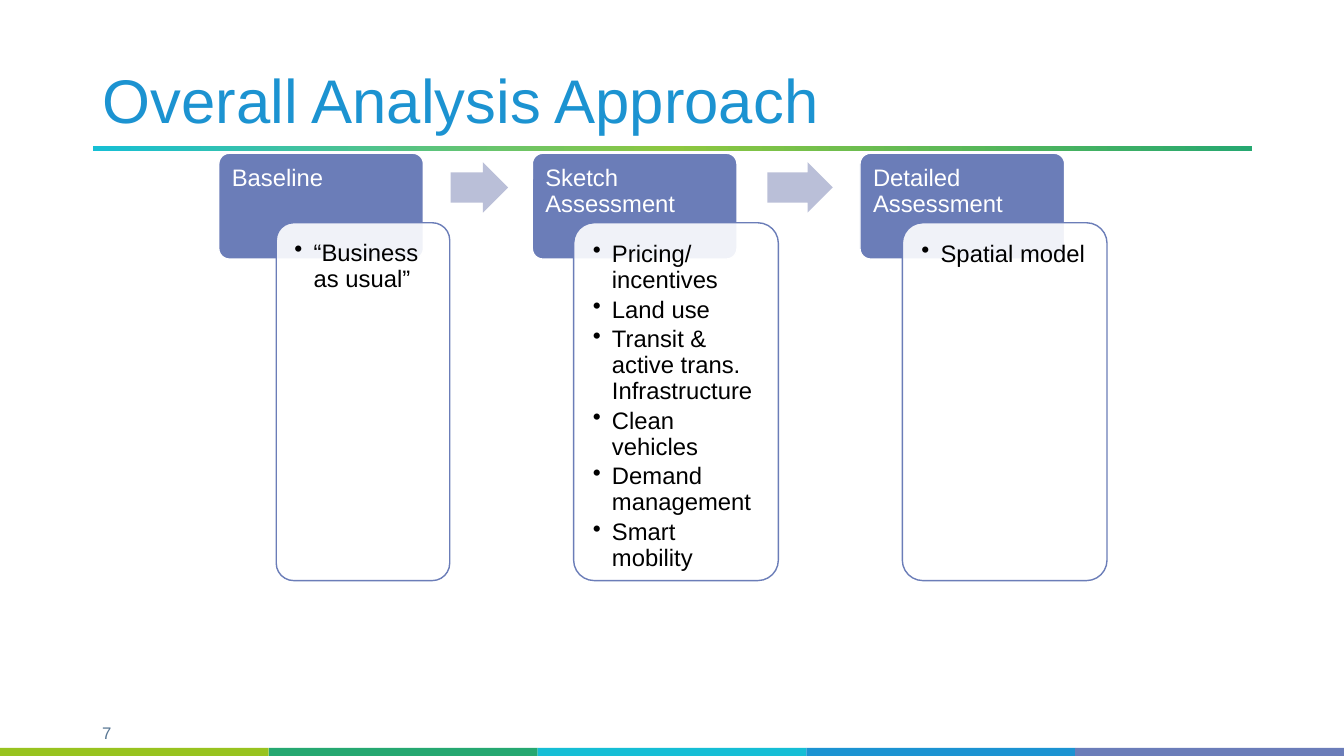
from copy import deepcopy

from pptx import Presentation
from pptx import util as u
from pptx.dml.color import RGBColor
from pptx.enum import shapes, text
from pptx.oxml import ns, xmlchemy as xc

KIND = shapes.MSO_SHAPE
FONT = "Arial"
BLUE = "6B7DB8"
WHITE = "FFFFFF"
STRIPES = ["98C31F", "26A871", "16BED5", "1C93D2", "6B7DB9"]
FADE = [(0, "16BFD4"), (0.5, "8DC73F"), (1, "26A871")]
# Header left, card left, card width, heading, bullets
STAGES = [
    (217, 274, 172, "Baseline", ["“Business as usual”"]),
    (528, 569, 203, "Sketch Assessment", [
        "Pricing/ incentives", "Land use",
        "Transit & active trans. Infrastructure", "Clean vehicles",
        "Demand management", "Smart mobility"]),
    (853, 895, 203, "Detailed Assessment", ["Spatial model"]),
]
ARROWS = [(447, 57), (761, 65)]


def px(n):
    """One px is a hundredth of an inch."""
    return u.Emu(int(n * 9144))


def hue(code):
    return RGBColor.from_string(code)


def place(item, x, y, w, h):
    item.left, item.top, item.width, item.height = px(x), px(y), px(w), px(h)


def block(slide, kind, box, fill, line=None):
    item = slide.shapes.add_shape(kind, *map(px, box))
    item.shadow.inherit = False
    item.fill.solid()
    item.fill.fore_color.rgb = hue(fill)
    if line:
        item.line.color.rgb = hue(line)
        item.line.width = u.Pt(1)
    else:
        item.line.fill.background()
    return item


def inset(frame, left, top, right, base):
    frame.margin_left, frame.margin_top = px(left), px(top)
    frame.margin_right, frame.margin_bottom = px(right), px(base)


def style(para, size, color, align=text.PP_ALIGN.LEFT):
    para.alignment = align
    para.line_spacing = 0.9
    for run in para.runs:
        run.font.size = u.Pt(size)
        run.font.name = FONT
        run.font.color.rgb = hue(color)


def bullet(para):
    props = para._p.get_or_add_pPr()
    props.set("marL", str(px(19)))
    props.set("indent", str(-px(19)))
    mark = xc.OxmlElement("a:buChar")
    mark.set("char", "•")
    props.append(mark)


# Title and the fading rule below it
def heading(slide, x, y, w, h):
    title = slide.shapes.title
    place(title, x, y, w, h)
    frame = title.text_frame
    frame.text = "Overall Analysis Approach"
    frame.auto_size = text.MSO_AUTO_SIZE.NONE
    frame.vertical_anchor = text.MSO_ANCHOR.BOTTOM
    style(frame.paragraphs[0], 44, "1C93D1")

    rule = block(slide, KIND.RECTANGLE, (x, y + 134, w, 5), WHITE)
    rule.fill.gradient()
    rule.fill.gradient_angle = 0
    first = rule._element.spPr.find(".//" + ns.qn("a:gs"))
    first.addnext(deepcopy(first))
    for stop, (pos, color) in zip(rule.fill.gradient_stops, FADE):
        stop.position = pos
        stop.color.rgb = hue(color)


# Page number and coloured stripes
def footer(slide, y, w, h):
    note = slide.shapes.add_textbox(px(74), px(y - 28), px(64), px(30))
    note.text_frame.word_wrap = True
    note.text_frame.text = "7"
    style(note.text_frame.paragraphs[0], 12, "597794", text.PP_ALIGN.CENTER)
    step = w / len(STRIPES)
    for i, color in enumerate(STRIPES):
        block(slide, KIND.RECTANGLE, (i * step, y, step, h), color)


# Header with an overlapping card of bullets
def stage(slide, x, y, left, wide, name, points):
    head = block(slide, KIND.ROUNDED_RECTANGLE, (x, y, 203, 105), BLUE, WHITE)
    card = block(slide, KIND.ROUNDED_RECTANGLE, (left, y + 69, wide, 355),
                 WHITE, BLUE)
    tint = card._element.spPr.find(".//" + ns.qn("a:srgbClr"))
    alpha = xc.OxmlElement("a:alpha")
    alpha.set("val", "90000")
    tint.append(alpha)

    for item, lines in ((head, [name]), (card, points)):
        item.adjustments[0] = 0.1
        frame = item.text_frame
        frame.word_wrap = True
        frame.vertical_anchor = text.MSO_ANCHOR.TOP
        frame.text = "\n".join(lines)
    inset(head.text_frame, 10, 10, 10, 7)
    inset(card.text_frame, 13, 13, 13, 13)
    style(head.text_frame.paragraphs[0], 17, WHITE)
    for para in card.text_frame.paragraphs:
        bullet(para)
        style(para, 17, "000000")
        para.space_after = u.Pt(3)


def flow(slide, y):
    for x, left, wide, name, points in STAGES:
        stage(slide, x, y, left, wide, name, points)
    for x, w in ARROWS:
        arrow = block(slide, KIND.RIGHT_ARROW, (x, y + 9, w, 50), "BABFD8")
        arrow.adjustments[0] = 0.6
        arrow.adjustments[1] = 0.5


def main():
    deck = Presentation()
    deck.slide_width, deck.slide_height = px(1333), px(750)
    slide = deck.slides.add_slide(deck.slide_layouts[5])
    heading(slide, 92, 11, 1150, 130)
    footer(slide, 742, 1333, 10)
    flow(slide, 152)
    deck.save("out.pptx")


if __name__ == "__main__":
    main()
